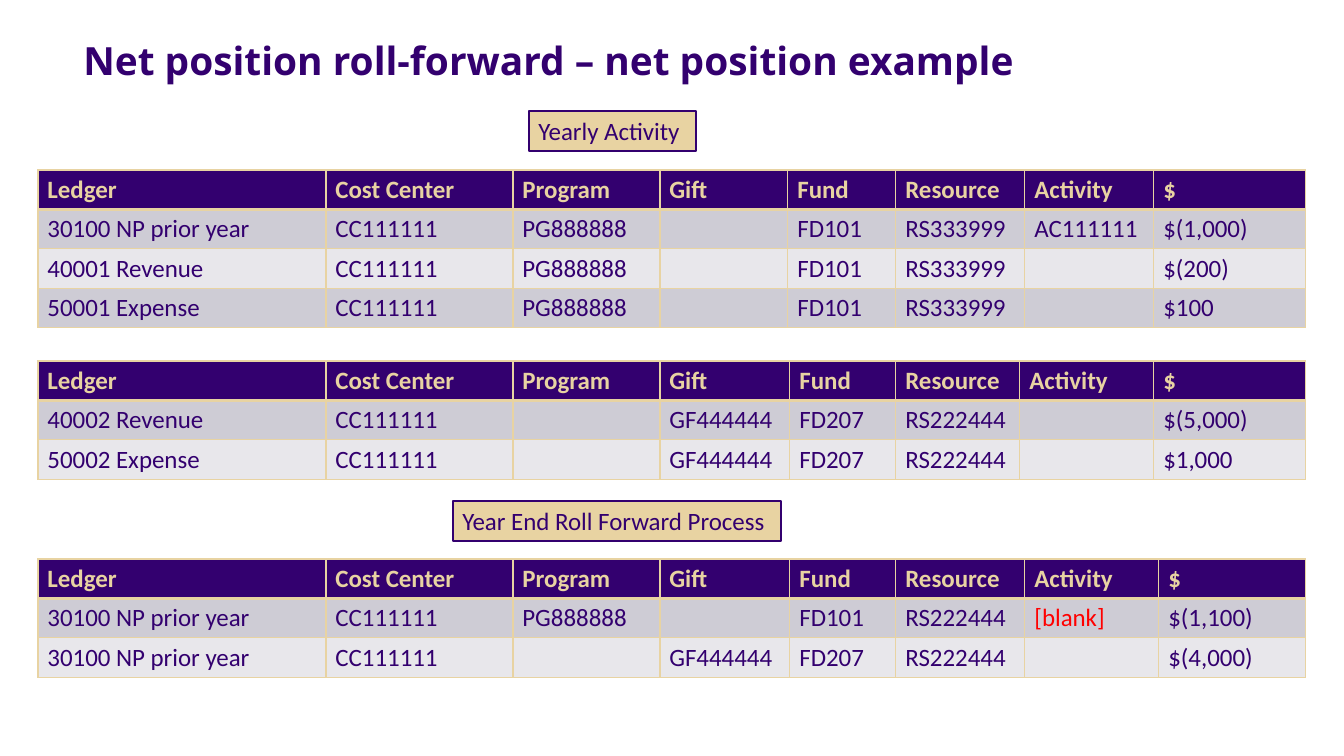
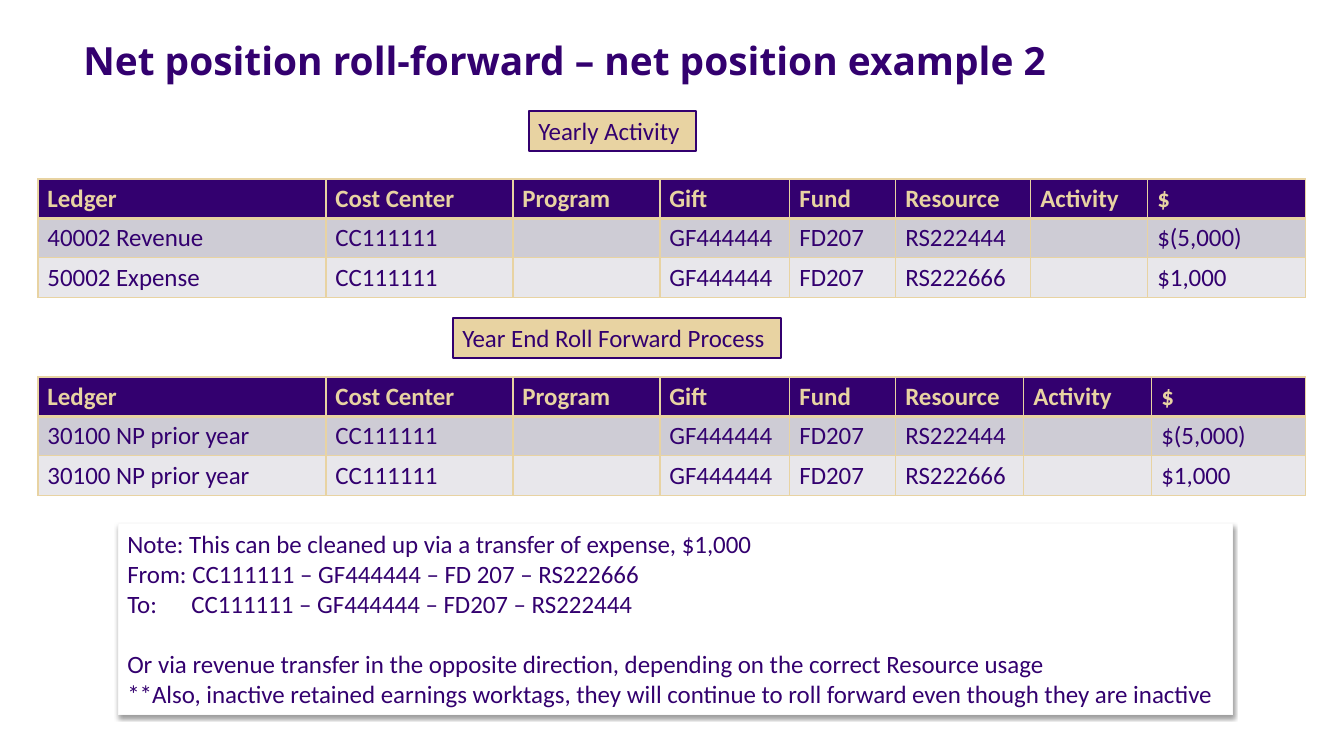
from dataclasses import dataclass

from lxml import etree
from pptx import Presentation
from pptx import util as u
from pptx.dml.color import RGBColor
from pptx.enum import shapes, text
from pptx.oxml.ns import qn

PX = 914400 / 94.5  # EMU per px


@dataclass(frozen=True)
class Theme:
    purple: str = "33006F"
    gold: str = "E8D3A2"
    bands: tuple = ("CECCD5", "E8E7EB")
    white: str = "FFFFFF"
    note_line: str = "F9F9F9"
    alert: str = "FF0000"
    title_font: str = "Open Sans"
    body_font: str = "Calibri"
    title_size: float = 29.6
    body_size: float = 19


T = Theme()

HEADER = ("Ledger", "Cost Center", "Program", "Gift", "Fund", "Resource", "Activity", "$")
TABLE_LEFT, TABLE_WIDTH, ROW_HEIGHT = 38, 1268, 39
LEADING_COLS = (288, 187, 147)  # Ledger, Cost Center, Program
BLANK = "[blank]"
YEARLY = ("Yearly Activity", 529, 167)
YEAR_END = ("Year End Roll Forward Process", 453, 328)

# Each table: top, widths of Gift to Activity, body rows. Each label: label, top.
SLIDES = [
    {
        "title": "Net position roll-forward – net position example",
        "tables": [
            (170, (128, 108, 129, 129), [
                ("30100 NP prior year", "CC111111", "PG888888", "", "FD101", "RS333999", "AC111111", "$(1,000)"),
                ("40001 Revenue", "CC111111", "PG888888", "", "FD101", "RS333999", "", "$(200)"),
                ("50001 Expense", "CC111111", "PG888888", "", "FD101", "RS333999", "", "$100"),
            ]),
            (361, (130, 106, 124, 134), [
                ("40002 Revenue", "CC111111", "", "GF444444", "FD207", "RS222444", "", "$(5,000)"),
                ("50002 Expense", "CC111111", "", "GF444444", "FD207", "RS222444", "", "$1,000"),
            ]),
            (559, (130, 106, 129, 134), [
                ("30100 NP prior year", "CC111111", "PG888888", "", "FD101", "RS222444", BLANK, "$(1,100)"),
                ("30100 NP prior year", "CC111111", "", "GF444444", "FD207", "RS222444", "", "$(4,000)"),
            ]),
        ],
        "labels": [(YEAR_END, 501), (YEARLY, 111)],
        "note": [],
    },
    {
        "title": "Net position roll-forward – net position example 2",
        "tables": [
            (179, (130, 106, 135, 117), [
                ("40002 Revenue", "CC111111", "", "GF444444", "FD207", "RS222444", "", "$(5,000)"),
                ("50002 Expense", "CC111111", "", "GF444444", "FD207", "RS222666", "", "$1,000"),
            ]),
            (377, (130, 106, 128, 128), [
                ("30100 NP prior year", "CC111111", "", "GF444444", "FD207", "RS222444", "", "$(5,000)"),
                ("30100 NP prior year", "CC111111", "", "GF444444", "FD207", "RS222666", "", "$1,000"),
            ]),
        ],
        "labels": [(YEAR_END, 318), (YEARLY, 111)],
        # Groups of lines, set one line apart
        "note": [
            ("Note: This can be cleaned up via a transfer of expense, $1,000",
             "From: CC111111 – GF444444 – FD 207 – RS222666",
             "To:\tCC111111 – GF444444 – FD207 – RS222444"),
            ("Or via revenue transfer in the opposite direction, depending on the correct Resource usage",
             "**Also, inactive retained earnings worktags, they will continue to roll forward even though they are inactive"),
        ],
    },
]


def px(n):
    return u.Emu(round(n * PX))


def rgb(color):
    return RGBColor.from_string(color)


def style(p, color=T.purple, size=T.body_size, name=T.body_font, bold=False):
    f = p.font
    f.name, f.size, f.bold = name, u.Pt(size), bold
    f.color.rgb = rgb(color)


def add_title(s, title):
    tf = s.shapes.add_textbox(px(74), px(41), px(1203), px(49)).text_frame
    tf.word_wrap = True
    p = tf.paragraphs[0]
    p.text, p.line_spacing = title, 0.8
    style(p, size=T.title_size, name=T.title_font, bold=True)


def set_borders(cell, top, bottom):
    """Draw gold cell borders; top and bottom are widths in points."""
    tc_pr = cell._tc.get_or_add_tcPr()
    for side, width in (("L", 1), ("R", 1), ("T", top), ("B", bottom)):
        ln = etree.SubElement(tc_pr, qn(f"a:ln{side}"), w=str(u.Pt(width)))
        fill = etree.SubElement(ln, qn("a:solidFill"))
        etree.SubElement(fill, qn("a:srgbClr"), val=T.gold)


def add_ledger(s, top, middle_cols, body):
    rows = [HEADER, *body]
    cols = [*LEADING_COLS, *middle_cols]
    cols.append(TABLE_WIDTH - sum(cols))
    table = s.shapes.add_table(len(rows), len(cols), px(TABLE_LEFT), px(top),
                               px(TABLE_WIDTH), px(ROW_HEIGHT * len(rows))).table
    for col, width in zip(table.columns, cols):
        col.width = px(width)
    for i, values in enumerate(rows):
        table.rows[i].height = px(ROW_HEIGHT)
        header = i == 0
        for j, value in enumerate(values):
            cell = table.cell(i, j)
            set_borders(cell, 3 if i == 1 else 1, 3 if header else 1)
            cell.fill.solid()
            cell.fill.fore_color.rgb = rgb(T.purple if header else T.bands[(i - 1) % 2])
            cell.text = value
            color = T.gold if header else T.alert if value == BLANK else T.purple
            style(cell.text_frame.paragraphs[0], color, bold=header)


def add_box(s, left, top, width, height, fill, line, line_width):
    sp = s.shapes.add_shape(shapes.MSO_SHAPE.RECTANGLE, px(left), px(top), px(width), px(height))
    sp.shadow.inherit = False
    sp.fill.solid()
    sp.fill.fore_color.rgb = rgb(fill)
    sp.line.color.rgb = rgb(line)
    sp.line.width = u.Pt(line_width)
    sp.text_frame.word_wrap = True
    sp.text_frame.vertical_anchor = text.MSO_ANCHOR.TOP
    return sp


def add_label(s, label, top):
    caption, left, width = label
    p = add_box(s, left, top, width, 40, T.gold, T.purple, 2).text_frame.paragraphs[0]
    p.text, p.alignment = caption, text.PP_ALIGN.LEFT
    style(p)


def add_shadow(sp):
    effects = sp._element.spPr.find(qn("a:effectLst"))
    shadow = etree.SubElement(effects, qn("a:outerShdw"), blurRad=str(u.Pt(3.1)),
                              dist=str(u.Pt(1.6)), dir="5400000", rotWithShape="0")
    color = etree.SubElement(shadow, qn("a:srgbClr"), val="000000")
    etree.SubElement(color, qn("a:alpha"), val="38000")


def add_note(s, groups):
    sp = add_box(s, 118, 524, 1115, 191, T.white, T.note_line, 0.75)
    add_shadow(sp)
    tf = sp.text_frame
    for g, lines in enumerate(groups):
        for i, line in enumerate(lines):
            p = tf.add_paragraph() if g or i else tf.paragraphs[0]
            p.text, p.alignment = line, text.PP_ALIGN.LEFT
            if "\t" in line:
                tabs = etree.SubElement(p._p.get_or_add_pPr(), qn("a:tabLst"))
                etree.SubElement(tabs, qn("a:tab"), pos=str(px(64)), algn="l")
            if g and i == 0:
                p.space_before = u.Pt(23)
            style(p)


def main():
    prs = Presentation()
    prs.slide_width, prs.slide_height = px(1344), px(756)
    for content in SLIDES:
        s = prs.slides.add_slide(prs.slide_layouts[6])
        add_title(s, content["title"])
        for ledger in content["tables"]:
            add_ledger(s, *ledger)
        for label, top in content["labels"]:
            add_label(s, label, top)
        if content["note"]:
            add_note(s, content["note"])
    prs.save("out.pptx")


if __name__ == "__main__":
    main()
